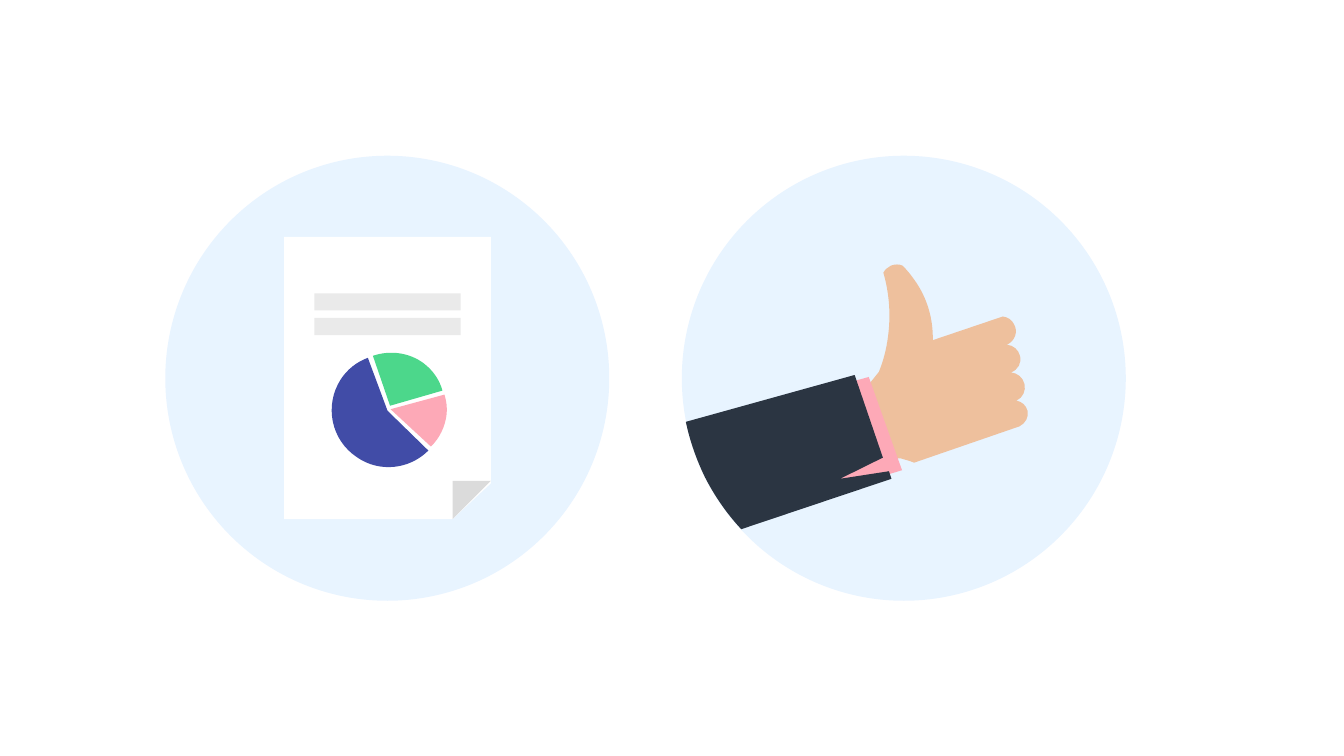
from math import cos, radians, sin

from lxml.etree import SubElement
from pptx import Presentation
from pptx.dml.color import RGBColor
from pptx.enum.shapes import MSO_SHAPE as SHAPE
from pptx.oxml.ns import qn
from pptx.util import Inches

SKY, SKIN, PINK, NAVY = "E8F4FF", "EEC09D", "FDA9B7", "2B3542"
WHITE, FOLD, GREY, BLUE, GREEN = "FFFFFF", "DBDBDB", "EAEAEA", "414CA7", "4CD78B"

prs = Presentation()
prs.slide_width, prs.slide_height = Inches(26.67), Inches(15)
s = prs.slides.add_slide(prs.slide_layouts[6])


def paint(sp, color):
    sp.fill.solid()
    sp.fill.fore_color.rgb = RGBColor.from_string(color)
    sp.line.fill.background()
    sp.shadow.inherit = False
    return sp


def outline(color, box, *steps, turn=0):
    """Draw a closed outline in a box turned about its centre.

    A step is a point (x, y) or a Bezier (x1, y1, x2, y2, x, y), as seen on the slide.
    """
    left, top, width, height = box
    right, bottom = left + width, top + height
    builder = s.shapes.build_freeform(Inches(left), Inches(top))
    builder.add_line_segments([(Inches(x), Inches(y)) for x, y in
                               ((right, top), (right, bottom), (left, bottom))])
    sp = builder.convert_to_shape()
    sp.rotation = turn
    track = sp._element.xpath(".//a:path")[0]
    for child in list(track):
        track.remove(child)
    c, n = cos(radians(turn)), sin(radians(turn))
    for i, step in enumerate(steps):
        tag = "a:moveTo" if i == 0 else "a:lnTo" if len(step) == 2 else "a:cubicBezTo"
        segment = SubElement(track, qn(tag))
        for x, y in zip(step[::2], step[1::2]):
            dx, dy = x - left - width / 2, y - top - height / 2
            SubElement(segment, qn("a:pt"),
                       x=str(int(Inches(width / 2 + dx * c + dy * n))),
                       y=str(int(Inches(height / 2 - dx * n + dy * c))))
    SubElement(track, qn("a:close"))
    return paint(sp, color)


# Background circles
for col in range(2):
    paint(s.shapes.add_shape(SHAPE.OVAL, Inches(3.28 + 10.25 * col), Inches(3.09),
                             Inches(8.81), Inches(8.83)), SKY)

# Thumbs-up
hand = outline(
    SKIN, (17.04, 5.06, 3.19, 3.85), (17.71, 9.16), (17.8, 9.09),
    (17.86, 9.09, 17.91, 9.1, 17.96, 9.12),
    (18.02, 9.13, 18.08, 9.16, 18.14, 9.18),
    (20.23, 8.46),
    (20.35, 8.4, 20.42, 8.27, 20.39, 8.15),
    (20.36, 8.04, 20.28, 7.97, 20.17, 7.95),
    (20.3, 7.89, 20.36, 7.75, 20.33, 7.62),
    (20.3, 7.49, 20.19, 7.4, 20.06, 7.39),
    (20.2, 7.34, 20.28, 7.2, 20.24, 7.06),
    (20.21, 6.94, 20.11, 6.85, 19.98, 6.84),
    (20.14, 6.77, 20.21, 6.58, 20.12, 6.43),
    (20.08, 6.35, 20, 6.29, 19.9, 6.28),
    (18.51, 6.75),
    (18.52, 6.33, 18.4, 5.91, 18.15, 5.56),
    (18.08, 5.46, 18, 5.36, 17.91, 5.27),
    (17.84, 5.24, 17.76, 5.24, 17.68, 5.27),
    (17.62, 5.3, 17.56, 5.35, 17.53, 5.41),
    (17.65, 5.83, 17.68, 6.26, 17.62, 6.69),
    (17.59, 6.93, 17.53, 7.16, 17.44, 7.38),
    (17.19, 7.69), turn=341.2)
cuff = outline(PINK, (15.16, 7.48, 2.75, 2.68),
               (15.16, 8.05), (17.24, 7.48), (17.9, 9.33), (15.16, 10.16))
sleeve = outline(
    NAVY, (13.61, 7.44, 4.08, 3.07), (13.61, 8.37), (16.96, 7.44), (17.52, 9.08),
    (16.67, 9.5), (17.64, 9.35), (17.69, 9.5), (14.71, 10.5),
    (14.42, 10.19, 14.18, 9.84, 13.99, 9.47),
    (13.82, 9.12, 13.69, 8.75, 13.61, 8.37))
s.shapes.add_group_shape([hand, cuff, sleeve])

# Report page
page = outline(WHITE, (4.89, 5.45, 5.6, 4.1), (5.64, 4.7), (9.74, 4.7),
               (9.74, 9.59), (8.98, 10.3), (5.64, 10.3), turn=270)
fold = outline(FOLD, (8.98, 9.54, 0.76, 0.75),
               (8.98, 9.54), (8.98, 10.3), (9.74, 9.54), turn=90)
bars = [paint(s.shapes.add_shape(SHAPE.RECTANGLE, Inches(6.24), Inches(5.82 + 0.49 * row),
                                 Inches(2.9), Inches(0.34)), GREY)
        for row in range(2)]

# Pie slices
blue_slice = outline(
    BLUE, (6.58, 7.1, 1.92, 2.17), (8.5, 8.94),
    (8.12, 9.32, 7.52, 9.38, 7.08, 9.07),
    (6.57, 8.73, 6.43, 8.05, 6.76, 7.53),
    (6.89, 7.33, 7.08, 7.18, 7.3, 7.1),
    (7.69, 8.15))
green_slice = outline(
    GREEN, (7.4, 7, 1.38, 1.05), (7.4, 7.06),
    (7.75, 6.94, 8.13, 7, 8.41, 7.21),
    (8.59, 7.35, 8.72, 7.53, 8.78, 7.75),
    (7.74, 8.05))
pink_slice = outline(
    PINK, (7.75, 7.83, 1.12, 1.04), (8.82, 7.83),
    (8.86, 7.96, 8.88, 8.1, 8.86, 8.24),
    (8.83, 8.47, 8.72, 8.7, 8.55, 8.86),
    (7.75, 8.12))
s.shapes.add_group_shape([page, fold, *bars, blue_slice, green_slice, pink_slice])

prs.save("out.pptx")
